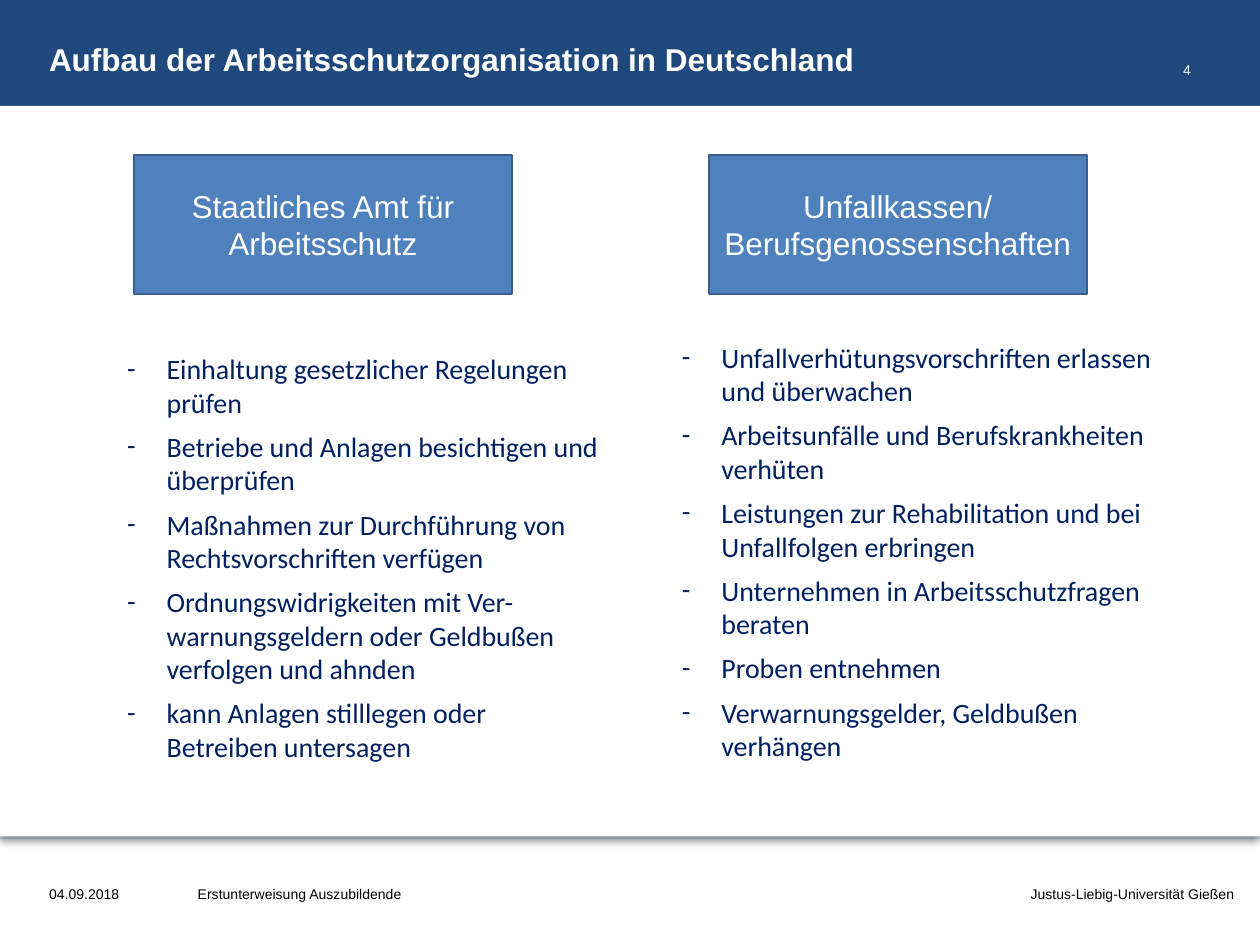
from lxml import etree
from pptx import Presentation
from pptx.dml.color import RGBColor
from pptx.enum.shapes import MSO_SHAPE
from pptx.enum.text import MSO_ANCHOR, MSO_AUTO_SIZE, PP_ALIGN
from pptx.oxml import parse_xml
from pptx.oxml.ns import nsdecls, qn
from pptx.util import Pt

RECTANGLE = MSO_SHAPE.RECTANGLE
MIDDLE, BOTTOM = MSO_ANCHOR.MIDDLE, MSO_ANCHOR.BOTTOM
LEFT, CENTER, RIGHT = PP_ALIGN.LEFT, PP_ALIGN.CENTER, PP_ALIGN.RIGHT
NO_AUTOFIT = MSO_AUTO_SIZE.NONE

NAVY = RGBColor(0x1F, 0x49, 0x7D)
PALE_BLUE = RGBColor(0xDC, 0xE6, 0xF2)
BOX_BLUE = RGBColor(0x4F, 0x81, 0xBD)
BOX_LINE = RGBColor(0x3A, 0x5F, 0x8C)
LIST_BLUE = RGBColor(0x00, 0x20, 0x60)
WHITE = RGBColor(0xFF, 0xFF, 0xFF)
BLACK = RGBColor(0x00, 0x00, 0x00)

PANEL_SHADOW = f"""<a:effectLst {nsdecls("a")}>
  <a:outerShdw blurRad="{Pt(4)}" dist="{Pt(3)}" dir="5400000" rotWithShape="0">
    <a:srgbClr val="000000"><a:alpha val="40000"/></a:srgbClr>
  </a:outerShdw>
</a:effectLst>"""

TITLE_FONT = {"name": "Arial", "size": Pt(18), "bold": True}
BOX_FONT = {"name": "Arial", "size": Pt(18)}
SMALL_FONT = {"name": "Arial", "size": Pt(8)}
LIST_FONT = {"name": "Calibri", "size": Pt(16)}

# heading, box left, list position, list entries (\v is a line break)
COLUMNS = [
    ("Staatliches Amt für Arbeitsschutz", 76.5, (65.5, 197, 284, 243), [
        "Einhaltung gesetzlicher Regelungen prüfen",
        "Betriebe und Anlagen besichtigen und überprüfen",
        "Maßnahmen zur Durchführung von Rechtsvorschriften verfügen",
        "Ordnungswidrigkeiten mit Ver-warnungsgeldern oder Geldbußen "
        "verfolgen und ahnden",
        "kann Anlagen stilllegen oder\vBetreiben untersagen",
    ]),
    ("Unfallkassen/ Berufsgenossenschaften", 405, (382.5, 192, 284, 246), [
        "Unfallverhütungsvorschriften erlassen und überwachen",
        "Arbeitsunfälle und Berufskrankheiten\vverhüten",
        "Leistungen zur Rehabilitation und bei\vUnfallfolgen erbringen",
        "Unternehmen in Arbeitsschutzfragen beraten",
        "Proben entnehmen",
        "Verwarnungsgelder, Geldbußen verhängen",
    ]),
]

# text, position, alignment, anchor, right inset, colour
SMALL_TEXTS = [
    ("Justus-Liebig-Universität Gießen", (524, 496, 181.5, 29), RIGHT, MIDDLE, 0, BLACK),
    ("04.09.2018", (28, 496, 65.5, 29), LEFT, MIDDLE, 0, BLACK),
    ("Erstunterweisung Auszubildende", (113, 496, 411, 29), LEFT, MIDDLE, 0, BLACK),
    ("4", (641.5, 28, 42, 16.5), RIGHT, BOTTOM, 3, WHITE),
]


def format_font(paragraph, values, color):
    for name, value in values.items():
        setattr(paragraph.font, name, value)
    paragraph.font.color.rgb = color


def format_frame(frame, anchor, insets=None):
    """Wrap the text, fix its size and set insets as left, top, right, bottom."""
    frame.word_wrap = True
    frame.auto_size = NO_AUTOFIT
    frame.vertical_anchor = anchor
    if insets:
        for side, inset in zip(("left", "top", "right", "bottom"), insets):
            setattr(frame, f"margin_{side}", Pt(inset))


presentation = Presentation()
presentation.slide_width, presentation.slide_height = Pt(720), Pt(540)
slide = presentation.slides.add_slide(presentation.slide_layouts[3])
slide.background.fill.solid()
slide.background.fill.fore_color.rgb = NAVY
title, *lists = slide.placeholders

# Background panels
for top, height, color in [(479.5, 60.5, WHITE), (62, 417.5, PALE_BLUE), (60.5, 417.5, WHITE)]:
    panel = slide.shapes.add_shape(RECTANGLE, 0, Pt(top), Pt(720), Pt(height))
    panel.shadow.inherit = False
    panel.fill.solid()
    panel.fill.fore_color.rgb = color
    panel.line.fill.background()
properties = panel.element.spPr
properties.remove(properties.find(qn("a:effectLst")))
properties.append(parse_xml(PANEL_SHADOW))

# Placeholders go in front of the panels
for placeholder in (title, *lists):
    slide.shapes.element.append(placeholder.element)

title.left, title.top, title.width, title.height = Pt(28), Pt(0), Pt(607), Pt(44.5)
title.text_frame.text = "Aufbau der Arbeitsschutzorganisation in Deutschland"
format_frame(title.text_frame, BOTTOM, (0, 0, 0, 0))
title.text_frame.paragraphs[0].alignment = LEFT
format_font(title.text_frame.paragraphs[0], TITLE_FONT, WHITE)

for text, position, alignment, anchor, right_inset, color in SMALL_TEXTS:
    text_box = slide.shapes.add_textbox(*map(Pt, position))
    text_box.text_frame.text = text
    format_frame(text_box.text_frame, anchor, (0, 0, right_inset, 0))
    paragraph = text_box.text_frame.paragraphs[0]
    paragraph.alignment = alignment
    format_font(paragraph, SMALL_FONT, color)

# One heading box and one list per column
for body, (heading, box_left, position, entries) in zip(lists, COLUMNS):
    box = slide.shapes.add_shape(RECTANGLE, Pt(box_left), Pt(88.5), Pt(216), Pt(79.5))
    box.shadow.inherit = False
    box.fill.solid()
    box.fill.fore_color.rgb = BOX_BLUE
    box.line.color.rgb = BOX_LINE
    box.line.width = Pt(1)
    box.text_frame.text = heading
    format_frame(box.text_frame, MIDDLE)
    box.text_frame.paragraphs[0].alignment = CENTER
    format_font(box.text_frame.paragraphs[0], BOX_FONT, WHITE)

    body.left, body.top, body.width, body.height = map(Pt, position)
    frame = body.text_frame
    format_frame(frame, MIDDLE)
    for index, entry in enumerate(entries):
        paragraph = frame.add_paragraph() if index else frame.paragraphs[0]
        paragraph.text = entry
        paragraph.space_before = Pt(3 if index else 0)
        paragraph.space_after = Pt(3)
        paragraph_properties = paragraph._p.get_or_add_pPr()
        paragraph_properties.set("marL", str(Pt(22.5)))
        paragraph_properties.set("indent", str(Pt(-22.5)))
        etree.SubElement(paragraph_properties, qn("a:buFont"), typeface="Calibri")
        etree.SubElement(paragraph_properties, qn("a:buChar"), char="-")
        tabs = etree.SubElement(paragraph_properties, qn("a:tabLst"))
        etree.SubElement(tabs, qn("a:tab"), pos=str(Pt(14.5)), algn="l")
        format_font(paragraph, LIST_FONT, LIST_BLUE)

presentation.save("out.pptx")
